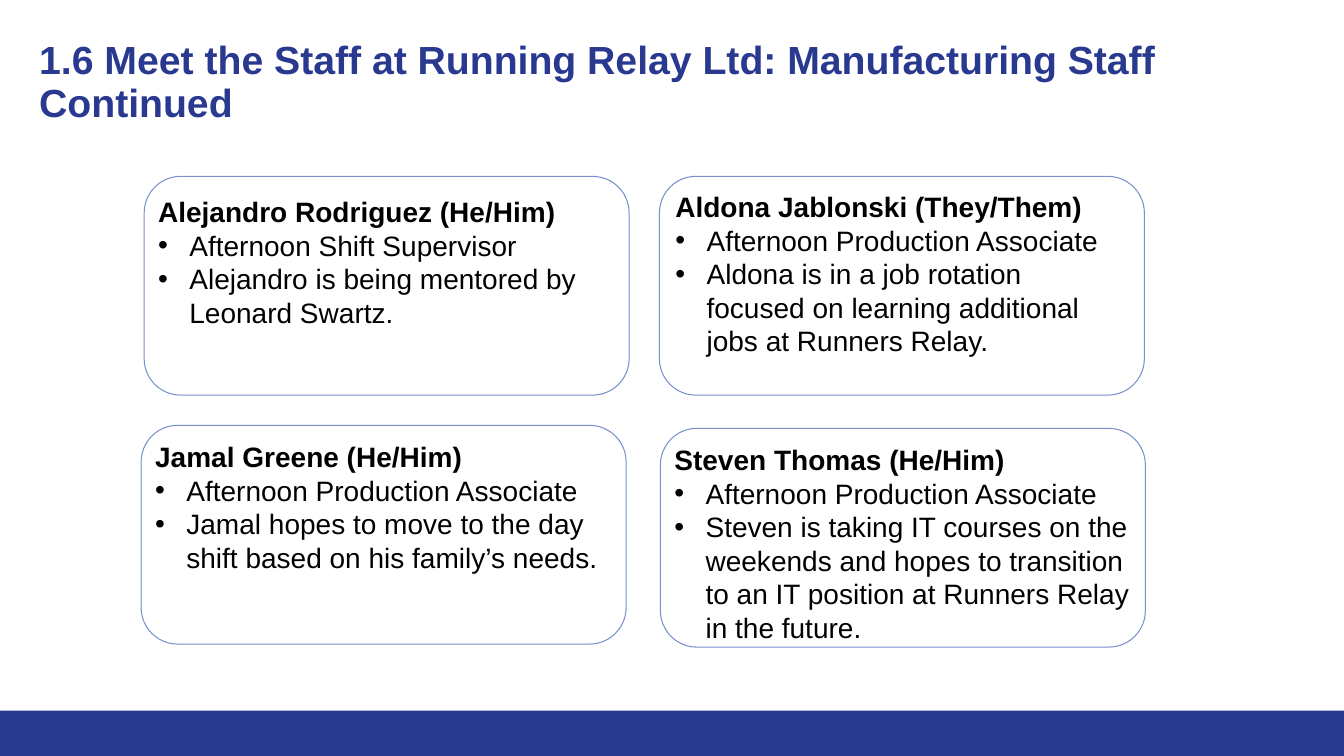
from lxml import etree
from pptx import Presentation
from pptx.dml.color import RGBColor
from pptx.enum.shapes import MSO_SHAPE as Shape
from pptx.enum.text import MSO_ANCHOR as Anchor, MSO_AUTO_SIZE as AutoSize
from pptx.oxml.ns import qn
from pptx.util import Inches, Pt

NAVY = RGBColor(0x2A, 0x39, 0x90)
OUTLINE = RGBColor(0x78, 0x90, 0xCD)
BLACK = RGBColor(0, 0, 0)

TITLE = "1.6 Meet the Staff at Running Relay Ltd: Manufacturing Staff Continued"
TITLE_FONT = {"name": "Arial", "size": Pt(28), "bold": True}
NAME_FONT = {"name": "Arial", "size": Pt(20), "bold": True}
DETAIL_FONT = {**NAME_FONT, "bold": False}

CARD_WIDTH, CARD_HEIGHT = 4.81, 2.17
BULLET_INDENT = 0.31

# Card corner, text box (left, top, width, height), name, details
STAFF = [
    ((1.43, 1.75), (1.47, 1.88, 4.6, 1.45), "Alejandro Rodriguez (He/Him)",
     ["Afternoon Shift Supervisor",
      "Alejandro is being mentored by Leonard Swartz."]),
    ((6.54, 1.75), (6.6, 1.83, 4.58, 1.78), "Aldona Jablonski (They/Them)",
     ["Afternoon Production Associate",
      "Aldona is in a job rotation focused on learning additional jobs at Runners Relay."]),
    ((1.4, 4.22), (1.44, 4.31, 4.65, 1.45), "Jamal Greene (He/Him)",
     ["Afternoon Production Associate",
      "Jamal hopes to move to the day shift based on his family’s needs."]),
    ((6.55, 4.25), (6.59, 4.34, 4.73, 2.12), "Steven Thomas (He/Him)",
     ["Afternoon Production Associate",
      "Steven is taking IT courses on the weekends and hopes to transition "
      "to an IT position at Runners Relay in the future."]),
]


def inches(box):
    return [Inches(length) for length in box]


def write(paragraph, text, font_format, color):
    run = paragraph.add_run()
    run.text = text
    for name, value in font_format.items():
        setattr(run.font, name, value)
    run.font.color.rgb = color


def add_bullet(paragraph):
    properties = paragraph._p.get_or_add_pPr()
    properties.set("marL", str(Inches(BULLET_INDENT)))
    properties.set("indent", str(-Inches(BULLET_INDENT)))
    etree.SubElement(properties, qn("a:buFont"), typeface="Arial")
    etree.SubElement(properties, qn("a:buChar"), char="•")


def add_footer_band(slide, box):
    band = slide.shapes.add_shape(Shape.RECTANGLE, *inches(box))
    band.shadow.inherit = False
    band.fill.solid()
    band.fill.fore_color.rgb = NAVY
    band.line.fill.background()


def add_title(slide, box):
    frame = slide.shapes.add_textbox(*inches(box)).text_frame
    frame.word_wrap = True
    frame.vertical_anchor = Anchor.MIDDLE
    paragraph = frame.paragraphs[0]
    paragraph.line_spacing = 0.9
    write(paragraph, TITLE, TITLE_FONT, NAVY)


def add_staff_text(slide, box, name, details):
    frame = slide.shapes.add_textbox(*inches(box)).text_frame
    frame.word_wrap = True
    frame.auto_size = AutoSize.SHAPE_TO_FIT_TEXT
    write(frame.paragraphs[0], name, NAME_FONT, BLACK)
    for detail in details:
        paragraph = frame.add_paragraph()
        add_bullet(paragraph)
        write(paragraph, detail, DETAIL_FONT, BLACK)


def add_card_outline(slide, box):
    card = slide.shapes.add_shape(Shape.ROUNDED_RECTANGLE, *inches(box))
    card.shadow.inherit = False
    card.fill.background()
    card.line.color.rgb = OUTLINE
    card.line.width = Pt(0.75)


def main():
    presentation = Presentation()
    presentation.slide_width = Inches(13.33)
    presentation.slide_height = Inches(7.5)
    slide = presentation.slides.add_slide(presentation.slide_layouts[6])
    add_footer_band(slide, (0, 7.05, 13.33, 0.45))
    add_title(slide, (0.29, 0.4, 12.69, 0.85))
    for corner, text_box, name, details in STAFF:
        add_staff_text(slide, text_box, name, details)
        add_card_outline(slide, (*corner, CARD_WIDTH, CARD_HEIGHT))
    presentation.save("out.pptx")


if __name__ == "__main__":
    main()
